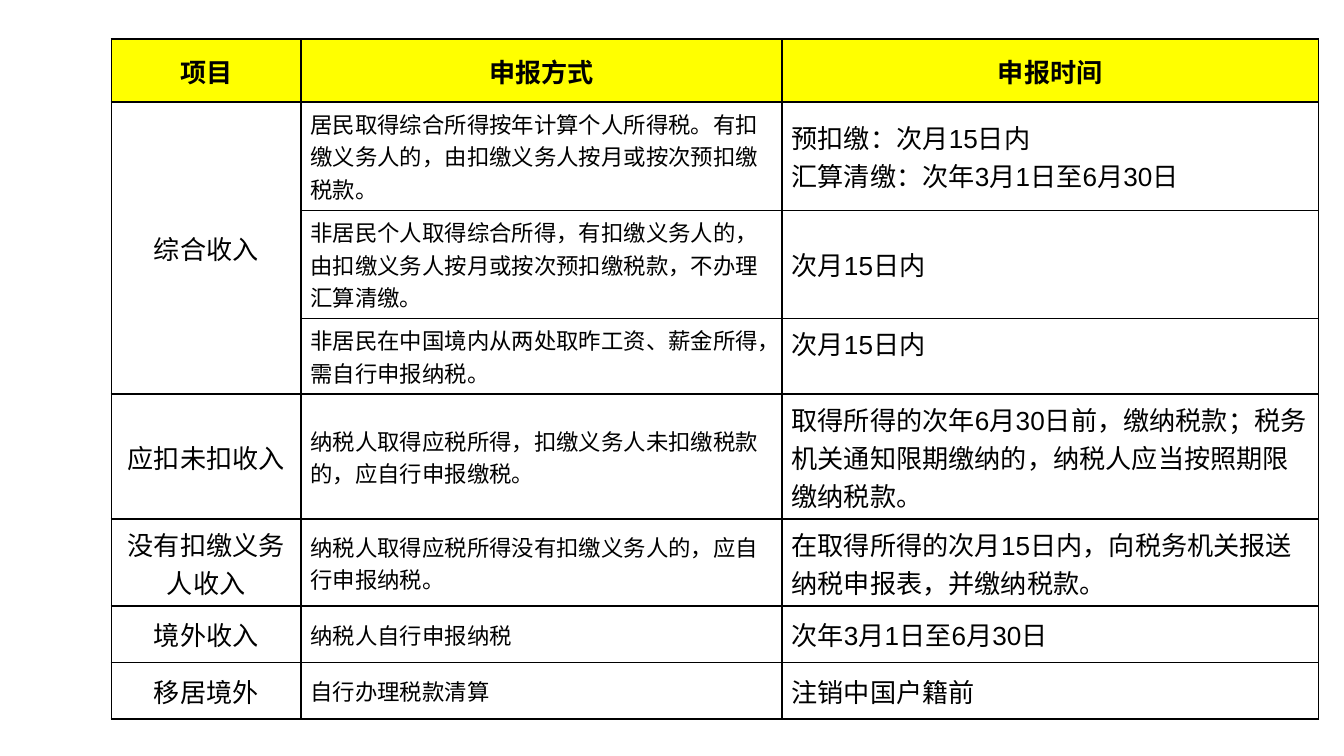
from lxml import etree
from pptx import Presentation
from pptx import util as u
from pptx.dml import color
from pptx.enum import text
from pptx.oxml import ns

HEADERS = ["项目", "申报方式", "申报时间"]
ROWS = [
    ("综合收入", "居民取得综合所得按年计算个人所得税。有扣缴义务人的，由扣缴义务人按月或按次预扣缴税款。",
     "预扣缴：次月15日内\n汇算清缴：次年3月1日至6月30日"),
    ("", "非居民个人取得综合所得，有扣缴义务人的，由扣缴义务人按月或按次预扣缴税款，不办理汇算清缴。",
     "次月15日内"),
    ("", "非居民在中国境内从两处取昨工资、薪金所得，需自行申报纳税。", "次月15日内"),
    ("应扣未扣收入", "纳税人取得应税所得，扣缴义务人未扣缴税款的，应自行申报缴税。",
     "取得所得的次年6月30日前，缴纳税款；税务机关通知限期缴纳的，纳税人应当按照期限缴纳税款。"),
    ("没有扣缴义务人收入", "纳税人取得应税所得没有扣缴义务人的，应自行申报纳税。",
     "在取得所得的次月15日内，向税务机关报送纳税申报表，并缴纳税款。"),
    ("境外收入", "纳税人自行申报纳税", "次年3月1日至6月30日"),
    ("移居境外", "自行办理税款清算", "注销中国户籍前"),
]
WIDTHS = [1.41, 3.58, 3.99]
HEIGHTS = [0.47, 0.58, 0.58, 0.46, 0.66, 0.64, 0.42, 0.42]


def rgb(value):
    return color.RGBColor.from_string(value)


def write(frame, content, size=14, bold=False, center=False, ink="000000", font="Arial"):
    for index, line in enumerate(content.split("\n")):
        para = frame.add_paragraph() if index else frame.paragraphs[0]
        para.alignment = text.PP_ALIGN.CENTER if center else text.PP_ALIGN.LEFT
        span = para.add_run()
        span.text = line
        span.font.name = font
        span.font.size = u.Pt(size)
        span.font.bold = bold
        span.font.color.rgb = rgb(ink)


class Page:
    ink = "000000"
    header_fill = "FFFF00"
    body_fill = "FFFFFF"
    border = 1

    def __init__(self, deck):
        self.slide = deck.slides.add_slide(deck.slide_layouts[6])

    def borders(self, cell):
        properties = cell._tc.get_or_add_tcPr()
        for index, side in enumerate(("lnL", "lnR", "lnT", "lnB")):
            line = etree.Element(ns.qn(f"a:{side}"), w=str(u.Pt(self.border)))
            fill = etree.SubElement(line, ns.qn("a:solidFill"))
            etree.SubElement(fill, ns.qn("a:srgbClr"), val=self.ink)
            properties.insert(index, line)

    def cell(self, cell, content, fill, **style):
        cell.fill.solid()
        cell.fill.fore_color.rgb = rgb(fill)
        cell.vertical_anchor = text.MSO_ANCHOR.MIDDLE
        cell.margin_left = cell.margin_right = u.Inches(0.07)
        cell.margin_top = cell.margin_bottom = u.Inches(0.04)
        self.borders(cell)
        if content:
            write(cell.text_frame, content, ink=self.ink, **style)

    def table(self, left, top, height, widths, heights, headers, rows):
        frame = self.slide.shapes.add_table(
            len(heights), len(widths), u.Inches(left), u.Inches(top),
            u.Inches(sum(widths)), u.Inches(height))
        table = frame.table
        for column, width in zip(table.columns, widths):
            column.width = u.Inches(width)
        for row, row_height in zip(table.rows, heights):
            row.height = u.Inches(row_height)
        frame.height = u.Inches(height)
        for column, content in enumerate(headers):
            self.cell(table.cell(0, column), content, self.header_fill, bold=True, center=True)
        for row, contents in enumerate(rows, 1):
            for column, content in enumerate(contents):
                self.cell(table.cell(row, column), content, self.body_fill,
                          size=12 if column == 1 else 14, center=column == 0)
        return table


def main():
    deck = Presentation()
    deck.slide_width = u.Inches(10)
    deck.slide_height = deck.slide_width * 9 // 16
    page = Page(deck)
    table = page.table(0.83, 0.29, 4.61, WIDTHS, HEIGHTS, HEADERS, ROWS)
    table.cell(1, 0).merge(table.cell(3, 0))
    table.cell(3, 2).vertical_anchor = text.MSO_ANCHOR.TOP
    deck.save("out.pptx")


if __name__ == "__main__":
    main()
